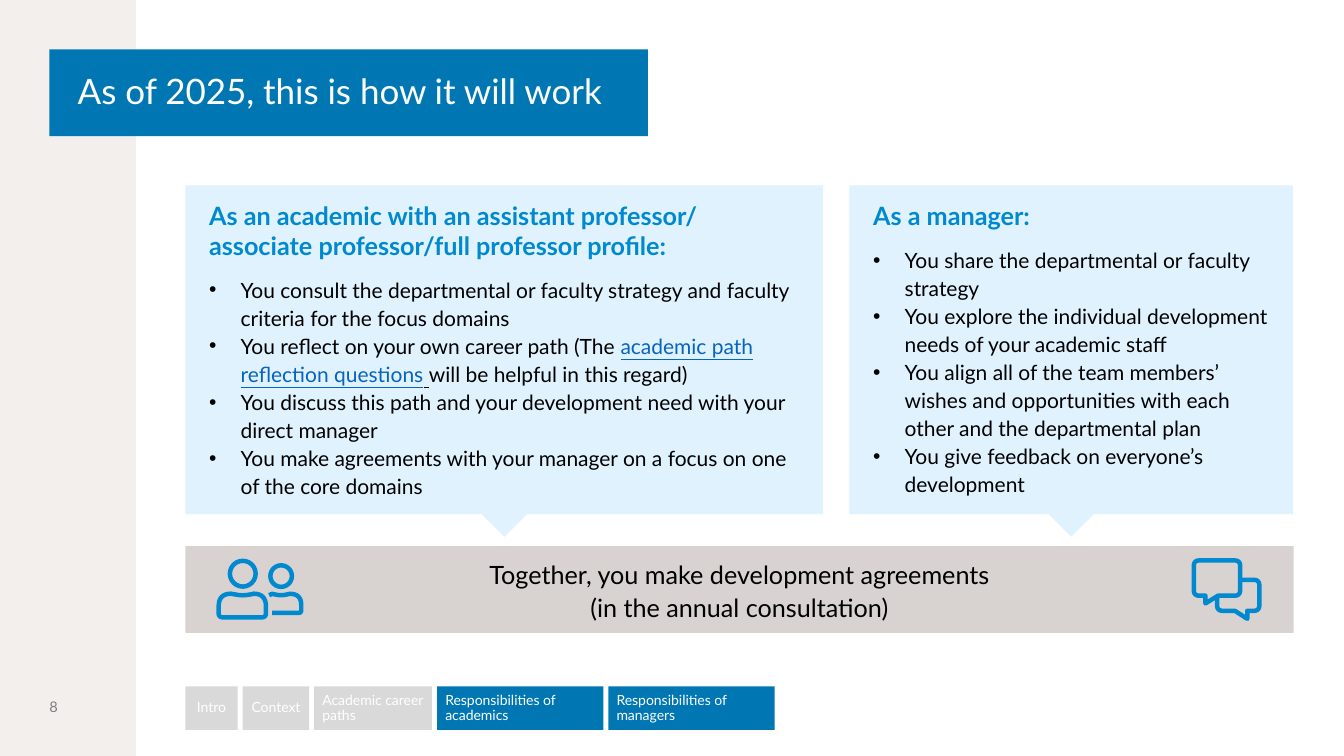
import pptx
import pptx.util
import pptx.dml.color
import pptx.enum.shapes
import pptx.enum.text
from lxml import etree

Pt = pptx.util.Pt
SHAPE = pptx.enum.shapes.MSO_SHAPE
ALIGN = pptx.enum.text.PP_ALIGN
ANCHOR = pptx.enum.text.MSO_ANCHOR
NS = "{http://schemas.openxmlformats.org/drawingml/2006/main}"

FONT = "Lato"
COLORS = {
    "sidebar": "F2EFED", "blue": "0077B3", "accent": "0089CF",
    "card": "DFF2FD", "bar": "D8D3D0", "inactive": "D9D9D9",
    "white": "FFFFFF", "black": "000000", "grey": "7F7F7F", "link": "0563C1",
}
LEFT = 132.5
CARD_TOP, CARD_HEIGHT = 132.5, 234.7
BLOCK_HEIGHT = 61.9
POINTER = 44
CHIP_GAP = 3.6
ICON_LINE = 3.2

ACADEMIC = [
    ["You consult the departmental or faculty strategy and faculty "
     "criteria for the focus domains"],
    ["You reflect on your own career path (The ",
     ("academic path reflection questions", "link"), (" ", "black"),
     "will be helpful in this regard)"],
    ["You discuss this path and your development need with your direct manager"],
    ["You make agreements with your manager on a focus on one of the core domains"],
]
MANAGER = [
    ["You share the departmental or faculty strategy"],
    ["You explore the individual development needs of your academic staff"],
    ["You align all of the team members’ wishes and opportunities with each "
     "other and the departmental plan"],
    ["You give feedback on everyone’s development"],
]
# Label, width, colour, alignment
CHIPS = [
    ("Intro", 37.4, "inactive", ALIGN.CENTER),
    ("Context", 47.5, "inactive", ALIGN.CENTER),
    ("Academic career paths", 84.2, "inactive", ALIGN.LEFT),
    ("Responsibilities of academics", 118.8, "blue", ALIGN.LEFT),
    ("Responsibilities of managers", 118.8, "blue", ALIGN.LEFT),
]


def rgb(name):
    return pptx.dml.color.RGBColor.from_string(COLORS[name])


def add_box(s, x, y, w, h, color, kind=SHAPE.RECTANGLE):
    sp = s.shapes.add_shape(kind, Pt(x), Pt(y), Pt(w), Pt(h))
    sp.shadow.inherit = False
    sp.fill.solid()
    sp.fill.fore_color.rgb = rgb(color)
    sp.line.fill.background()
    return sp


def set_frame(sp, insets=(0, 0, 0, 0), anchor=ANCHOR.MIDDLE, wrap=True):
    tf = sp.text_frame
    tf.word_wrap = wrap
    tf.vertical_anchor = anchor
    tf.margin_left, tf.margin_top, tf.margin_right, tf.margin_bottom = map(Pt, insets)
    return tf


def add_run(p, text, size, color, bold=False, underline=False):
    r = p.add_run()
    r.text = text
    r.font.name = FONT
    r.font.size = Pt(size)
    r.font.bold = bold
    r.font.underline = underline
    r.font.color.rgb = rgb(color)


def write_lines(p, lines, size, color, spacing, align=ALIGN.LEFT, bold=False):
    p.alignment = align
    p.line_spacing = spacing
    for i, line in enumerate(lines):
        if i:
            p.add_line_break()
        add_run(p, line, size, color, bold)


def add_bullet(p):
    pPr = p._p.get_or_add_pPr()
    pPr.set("marL", str(Pt(22.5)))
    pPr.set("indent", str(-Pt(22.5)))
    etree.SubElement(pPr, NS + "buFont", typeface="Arial")
    etree.SubElement(pPr, NS + "buChar", char="•")


def add_card(s, x, w, heading, bullets):
    # Pointer behind the lower edge
    add_box(s, x + (w - POINTER) / 2, CARD_TOP + CARD_HEIGHT - 36.8,
            POINTER, POINTER, "card").rotation = 45
    sp = add_box(s, x, CARD_TOP, w, CARD_HEIGHT, "card")
    tf = set_frame(sp, (17, 11.5, 11.5, 0), ANCHOR.TOP)
    write_lines(tf.paragraphs[0], heading, 18, "accent", Pt(21), bold=True)
    tf.paragraphs[0].space_after = Pt(10)
    for parts in bullets:
        p = tf.add_paragraph()
        add_bullet(p)
        p.alignment = ALIGN.LEFT
        p.line_spacing = Pt(20)
        for part in parts:
            if isinstance(part, tuple):
                add_run(p, part[0], 15, part[1], underline=True)
            else:
                add_run(p, part, 15, "black")


def style_icon(sp):
    sp.shadow.inherit = False
    sp.fill.background()
    sp.line.color.rgb = rgb("accent")
    sp.line.width = Pt(ICON_LINE)


def rounded_points(corners):
    """Turn (x, y, radius) corners into points along rounded bends."""
    points = []
    for i, (x, y, radius) in enumerate(corners):
        if not radius:
            points.append((x, y))
            continue
        ends = []
        for nx, ny, _ in (corners[i - 1], corners[(i + 1) % len(corners)]):
            share = radius / ((nx - x) ** 2 + (ny - y) ** 2) ** 0.5
            ends.append((x + (nx - x) * share, y + (ny - y) * share))
        (ax, ay), (bx, by) = ends
        for t in (step / 8 for step in range(9)):
            u = 1 - t
            points.append((u * u * ax + 2 * u * t * x + t * t * bx,
                           u * u * ay + 2 * u * t * y + t * t * by))
    return points


def add_outline(s, corners, close=True):
    points = [(Pt(x), Pt(y)) for x, y in rounded_points(corners)]
    builder = s.shapes.build_freeform(*points[0])
    builder.add_line_segments(points[1:], close=close)
    style_icon(builder.convert_to_shape())


def add_head(s, cx, cy, radius):
    style_icon(s.shapes.add_shape(SHAPE.OVAL, Pt(cx - radius), Pt(cy - radius),
                                  Pt(2 * radius), Pt(2 * radius)))


def add_people_icon(s):
    add_head(s, 173.5, 409.8, 9.2)
    add_head(s, 200.9, 411.5, 7.7)
    add_outline(s, [(156.3, 424.1, 9), (165, 424.1, 0), (173.5, 425.6, 4),
                    (182, 424.1, 0), (190.1, 424.1, 9), (190.1, 441, 3),
                    (156.3, 441, 3)])
    add_outline(s, [(192.3, 425.2, 0), (194.5, 424.2, 0), (201, 425.6, 4),
                    (207, 424.2, 0), (215.3, 424.2, 8), (215.3, 437.8, 2),
                    (194.5, 437.8, 0)], close=False)


def add_chat_icon(s):
    add_outline(s, [(853.2, 400.3, 4), (886.3, 400.3, 4), (886.3, 425.5, 4),
                    (870.5, 425.5, 0), (861.5, 431, 0), (861.5, 425.5, 0),
                    (853.2, 425.5, 4)])
    add_outline(s, [(887.5, 414.2, 0), (900, 414.2, 4), (900, 436.3, 4),
                    (891.4, 436.3, 0), (891.4, 442, 0), (882.5, 436.3, 0),
                    (869.8, 436.3, 4), (869.8, 427, 0)], close=False)


def main():
    prs = pptx.Presentation()
    prs.slide_width, prs.slide_height = Pt(960.5), Pt(540)
    s = prs.slides.add_slide(prs.slide_layouts[6])

    # Sidebar, title and page number
    add_box(s, 0, 0, 97.2, 540, "sidebar")
    title = add_box(s, 35.3, 35.3, 427.7, BLOCK_HEIGHT, "blue")
    tf = set_frame(title, (20.2, 17.3, 17.3, 17.3), wrap=False)
    write_lines(tf.paragraphs[0], ["As of 2025, this is how it will work"],
                25, "white", 0.9)
    number = s.shapes.add_textbox(Pt(35.3), Pt(469.4), Pt(61.9), Pt(70.6))
    write_lines(set_frame(number).paragraphs[0], ["8"], 10.5, "grey", 1.0)

    # Role cards
    add_card(s, LEFT, 455.8, ["As an academic with an assistant professor/",
                              "associate professor/full professor profile:"], ACADEMIC)
    add_card(s, 607, 317, ["As a manager:"], MANAGER)

    # Shared agreement bar
    bar = add_box(s, LEFT, 390.2, 792, BLOCK_HEIGHT, "bar")
    write_lines(set_frame(bar).paragraphs[0],
                ["Together, you make development agreements",
                 "(in the annual consultation)"], 18, "black", 1.1, ALIGN.CENTER)
    add_people_icon(s)
    add_chat_icon(s)

    # Section navigation
    x = LEFT
    for label, w, color, align in CHIPS:
        chip = add_box(s, x, 490.3, w, 31, color)
        tf = set_frame(chip, (5.8, 5.8, 5.8, 5.8))
        write_lines(tf.paragraphs[0], [label], 10, "white", 0.9, align)
        x += w + CHIP_GAP

    prs.save("out.pptx")


if __name__ == "__main__":
    main()
